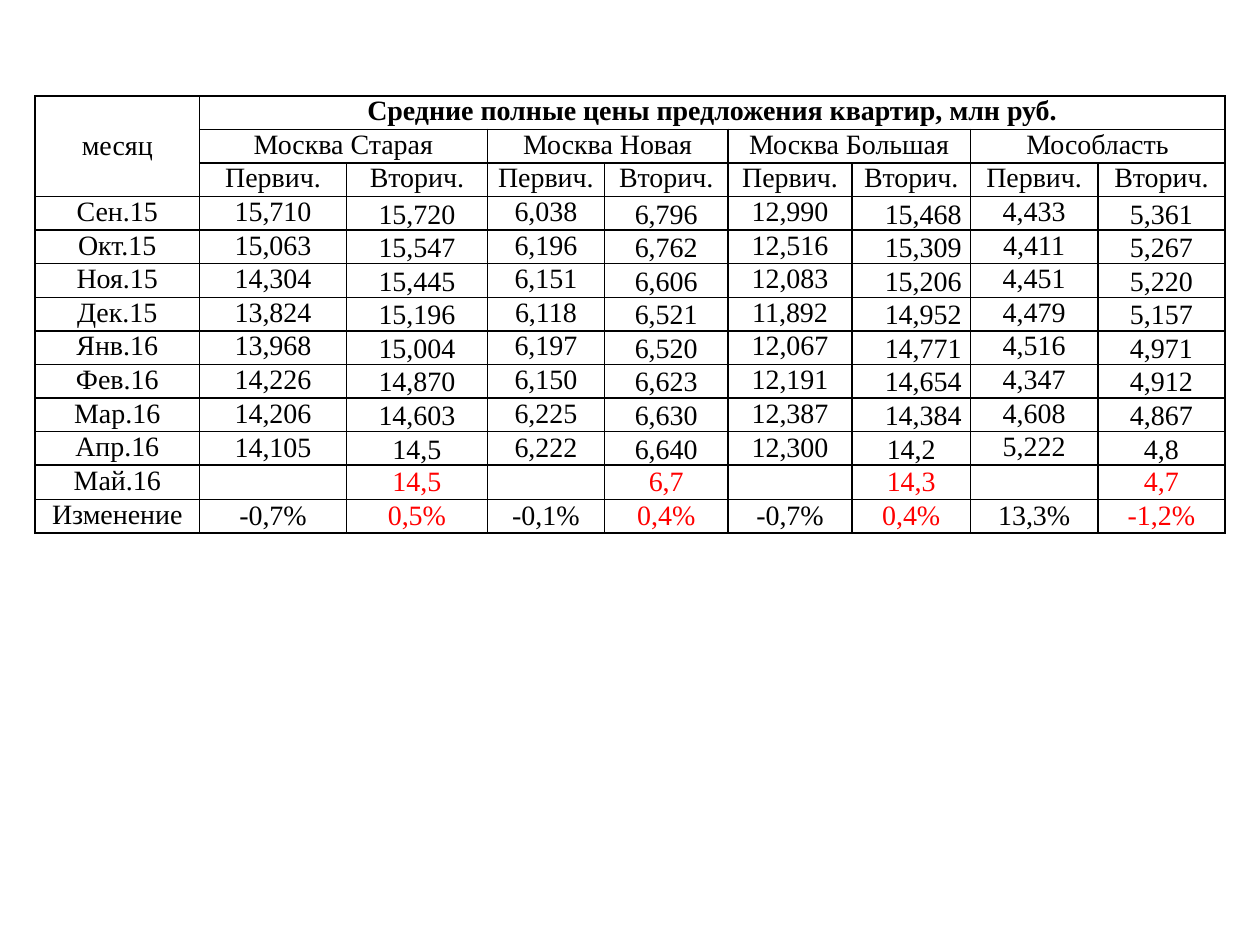
from lxml import etree
from pptx import Presentation
from pptx.dml.color import RGBColor
from pptx.enum.text import MSO_ANCHOR, PP_ALIGN
from pptx.oxml.ns import qn
from pptx.util import Pt

TOP, MIDDLE, BOTTOM = MSO_ANCHOR.TOP, MSO_ANCHOR.MIDDLE, MSO_ANCHOR.BOTTOM
CENTER, RIGHT = PP_ALIGN.CENTER, PP_ALIGN.RIGHT

COLORS = {"text": "000000", "border": "000000", "highlight": "FF0000"}
FONT = {"name": "Times New Roman", "size": Pt(16), "bold": False}
CELL_FORMAT = {"margin_left": Pt(5), "margin_right": Pt(5),
               "margin_top": 0, "margin_bottom": 0}
PLAIN_TABLE = {"first_row": False, "horz_banding": False}

TITLE = "Средние полные цены предложения квартир, млн руб."
REGIONS = ["Москва Старая", "Москва Новая", "Москва Большая", "Мособласть"]
MARKETS = ["Первич.", "Вторич."]
PRICES = [
    ["Сен.15", "15,710", "15,720", "6,038", "6,796", "12,990", "15,468", "4,433", "5,361"],
    ["Окт.15", "15,063", "15,547", "6,196", "6,762", "12,516", "15,309", "4,411", "5,267"],
    ["Ноя.15", "14,304", "15,445", "6,151", "6,606", "12,083", "15,206", "4,451", "5,220"],
    ["Дек.15", "13,824", "15,196", "6,118", "6,521", "11,892", "14,952", "4,479", "5,157"],
    ["Янв.16", "13,968", "15,004", "6,197", "6,520", "12,067", "14,771", "4,516", "4,971"],
    ["Фев.16", "14,226", "14,870", "6,150", "6,623", "12,191", "14,654", "4,347", "4,912"],
    ["Мар.16", "14,206", "14,603", "6,225", "6,630", "12,387", "14,384", "4,608", "4,867"],
    ["Апр.16", "14,105", "14,5", "6,222", "6,640", "12,300", "14,2", "5,222", "4,8"],
    ["Май.16", "", "14,5", "", "6,7", "", "14,3", "", "4,7"],
    ["Изменение", "-0,7%", "0,5%", "-0,1%", "0,4%", "-0,7%", "0,4%", "13,3%", "-1,2%"],
]
HEADER_ROWS = 3
APRIL, MAY = 7, 8
BIG_MOSCOW_RESALE, OBLAST_NEW = 6, 7
COLUMN_WIDTHS = [94, 84, 80.5, 67, 70.5, 71, 67.5, 73, 72.5]


def set_format(target, values):
    for name, value in values.items():
        setattr(target, name, value)


def add_borders(cell):
    properties = cell._tc.get_or_add_tcPr()
    for position, side in enumerate(("a:lnL", "a:lnR", "a:lnT", "a:lnB")):
        line = etree.Element(qn(side), w=str(Pt(1)))
        fill = etree.SubElement(line, qn("a:solidFill"))
        etree.SubElement(fill, qn("a:srgbClr"), val=COLORS["border"])
        properties.insert(position, line)


def prepare_cell(cell):
    """Clear the fill, draw the borders and keep an empty cell at row height."""
    set_format(cell, CELL_FORMAT)
    cell.fill.background()
    add_borders(cell)
    end_mark = cell.text_frame.paragraphs[0]._p.get_or_add_endParaRPr()
    end_mark.set("sz", str(int(FONT["size"].pt * 100)))


def write(cell, text, color="text", anchor=TOP, align=CENTER, bold=False):
    cell.vertical_anchor = anchor
    paragraph = cell.text_frame.paragraphs[0]
    paragraph.alignment = align
    if text:
        run = paragraph.add_run()
        run.text = text
        set_format(run.font, {**FONT, "bold": bold})
        run.font.color.rgb = RGBColor.from_string(COLORS[color])


def fill_header(table):
    table.cell(0, 0).merge(table.cell(HEADER_ROWS - 1, 0))
    write(table.cell(0, 0), "месяц", anchor=MIDDLE)
    table.cell(0, 1).merge(table.cell(0, len(COLUMN_WIDTHS) - 1))
    write(table.cell(0, 1), TITLE, bold=True)
    for index, region in enumerate(REGIONS):
        column = 1 + index * len(MARKETS)
        table.cell(1, column).merge(table.cell(1, column + 1))
        write(table.cell(1, column), region)
        for offset, market in enumerate(MARKETS):
            write(table.cell(2, column + offset), market)


def price_format(month, column):
    if column == 0:
        return {}
    resale = column % 2 == 0
    if month >= MAY:
        return {"anchor": MIDDLE, "color": "highlight" if resale else "text"}
    if resale:
        to_right = column == BIG_MOSCOW_RESALE and month < APRIL
        return {"anchor": BOTTOM, "align": RIGHT if to_right else CENTER}
    centered = month == APRIL and column != OBLAST_NEW
    return {"anchor": MIDDLE if centered else TOP}


def fill_prices(table):
    for month, values in enumerate(PRICES):
        for column, value in enumerate(values):
            write(table.cell(HEADER_ROWS + month, column), value,
                  **price_format(month, column))


def add_price_table(slide, left, top, height):
    row_count = HEADER_ROWS + len(PRICES)
    table = slide.shapes.add_table(
        row_count, len(COLUMN_WIDTHS), Pt(left), Pt(top),
        Pt(sum(COLUMN_WIDTHS)), Pt(height)).table
    set_format(table, PLAIN_TABLE)
    for column, width in zip(table.columns, COLUMN_WIDTHS):
        column.width = Pt(width)
    for row in table.rows:
        row.height = Pt(height / row_count)
        for cell in row.cells:
            prepare_cell(cell)
    fill_header(table)
    fill_prices(table)


def main():
    presentation = Presentation()
    presentation.slide_width, presentation.slide_height = Pt(720), Pt(540)
    slide = presentation.slides.add_slide(presentation.slide_layouts[6])
    add_price_table(slide, left=20, top=54.75, height=249.6)
    presentation.save("out.pptx")


if __name__ == "__main__":
    main()
